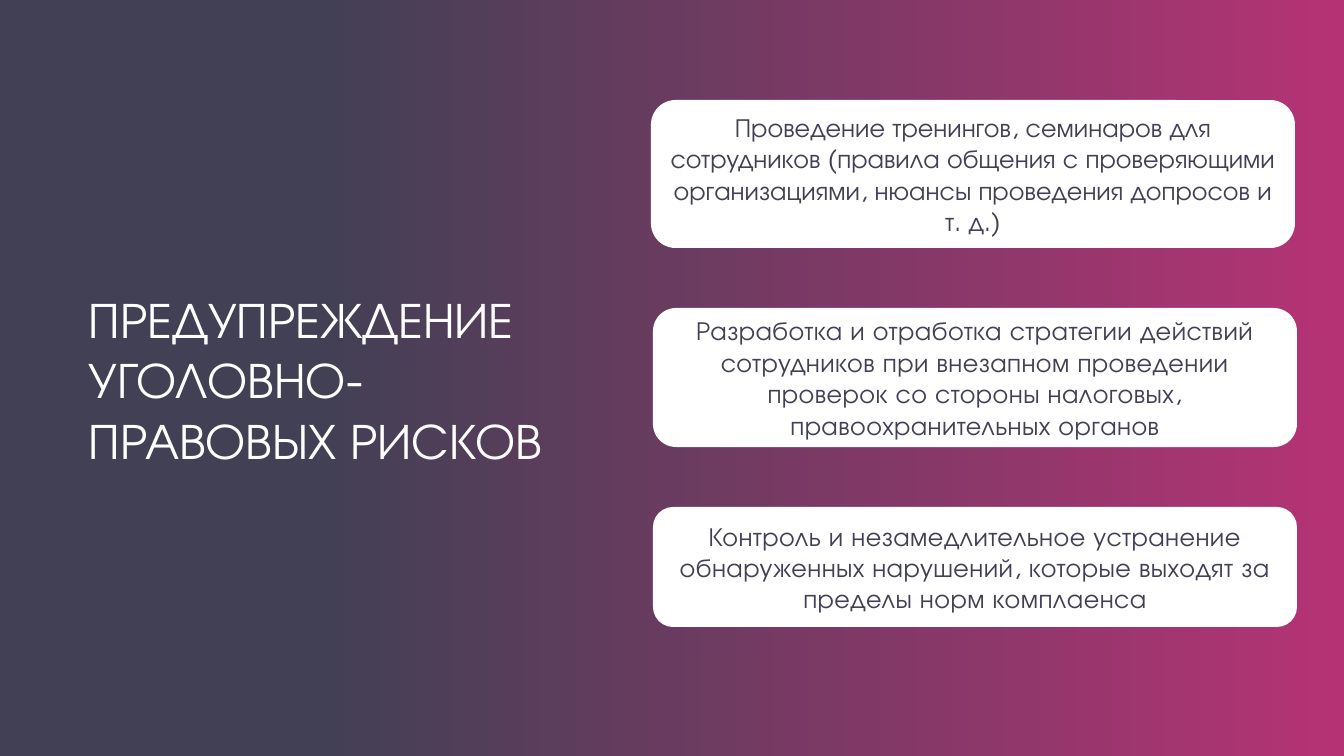
"""Builds a slide with a heading and three cards on preventing criminal law risks."""
from dataclasses import dataclass

from pptx import Presentation
from pptx.dml.color import RGBColor
from pptx.enum.shapes import MSO_SHAPE
from pptx.enum.text import MSO_ANCHOR, MSO_AUTO_SIZE, PP_ALIGN
from pptx.slide import Slide
from pptx.text.text import _Paragraph
from pptx.util import Emu, Pt

ROUND = MSO_SHAPE.ROUNDED_RECTANGLE
MIDDLE = MSO_ANCHOR.MIDDLE
GROW = MSO_AUTO_SIZE.SHAPE_TO_FIT_TEXT
CENTER = PP_ALIGN.CENTER

WIDE, HIGH = 1344, 756
SCALE = 12192000 / WIDE
FACE = "TeX Gyre Adventor"
WHITE, SLATE, PINK = "FFFFFF", "414054", "B53375"
TOP, GAP, CARD_WIDE = 100, 60, 644


@dataclass
class Card:
    left: int
    high: int
    text: str
    track: int = 0


HEAD = ["ПРЕДУПРЕЖДЕНИЕ", "УГОЛОВНО-ПРАВОВЫХ РИСКОВ"]
CARDS = [
    Card(651, 148, "Проведение тренингов, семинаров для сотрудников (правила общения с "
         "проверяющими организациями, нюансы проведения допросов и т. д.)"),
    Card(653, 139, "Разработка и отработка стратегии действий сотрудников при внезапном "
         "проведении проверок со стороны налоговых, правоохранительных органов", 30),
    Card(653, 120, "Контроль и незамедлительное устранение обнаруженных нарушений, "
         "которые выходят за пределы норм комплаенса", 30),
]


def px(size: int) -> Emu:
    return Emu(round(size * SCALE))


def color(code: str) -> RGBColor:
    return RGBColor.from_string(code)


def style(para: _Paragraph, size: float, code: str) -> None:
    para.font.name = FACE
    para.font.size = Pt(size)
    para.font.color.rgb = color(code)


def paint_back(slide: Slide) -> None:
    fill = slide.background.fill
    fill.gradient()
    fill.gradient_angle = 0
    for stop, place, code in zip(fill.gradient_stops, (0.23, 1), (SLATE, PINK)):
        stop.position = place
        stop.color.rgb = color(code)


def add_head(slide: Slide) -> None:
    frame = slide.shapes.add_textbox(px(79), px(283), px(526), px(194)).text_frame
    frame.word_wrap = True
    frame.auto_size = GROW
    frame.text = "\n".join(HEAD)
    for para in frame.paragraphs:
        style(para, 36, WHITE)


def add_card(slide: Slide, card: Card, top: int) -> None:
    shape = slide.shapes.add_shape(ROUND, px(card.left), px(top), px(CARD_WIDE), px(card.high))
    shape.shadow.inherit = False
    shape.fill.solid()
    shape.fill.fore_color.rgb = color(WHITE)
    shape.line.fill.background()
    frame = shape.text_frame
    frame.word_wrap = True
    frame.vertical_anchor = MIDDLE
    para = frame.paragraphs[0]
    para.text = card.text
    para.alignment = CENTER
    style(para, 18.7, SLATE)
    if card.track:
        para.runs[0].font._element.set("spc", str(card.track))


def main() -> None:
    deck = Presentation()
    deck.slide_width, deck.slide_height = px(WIDE), px(HIGH)
    slide = deck.slides.add_slide(deck.slide_layouts[6])
    paint_back(slide)
    add_head(slide)
    top = TOP
    for card in CARDS:
        add_card(slide, card, top)
        top += card.high + GAP
    deck.save("out.pptx")


if __name__ == "__main__":
    main()
